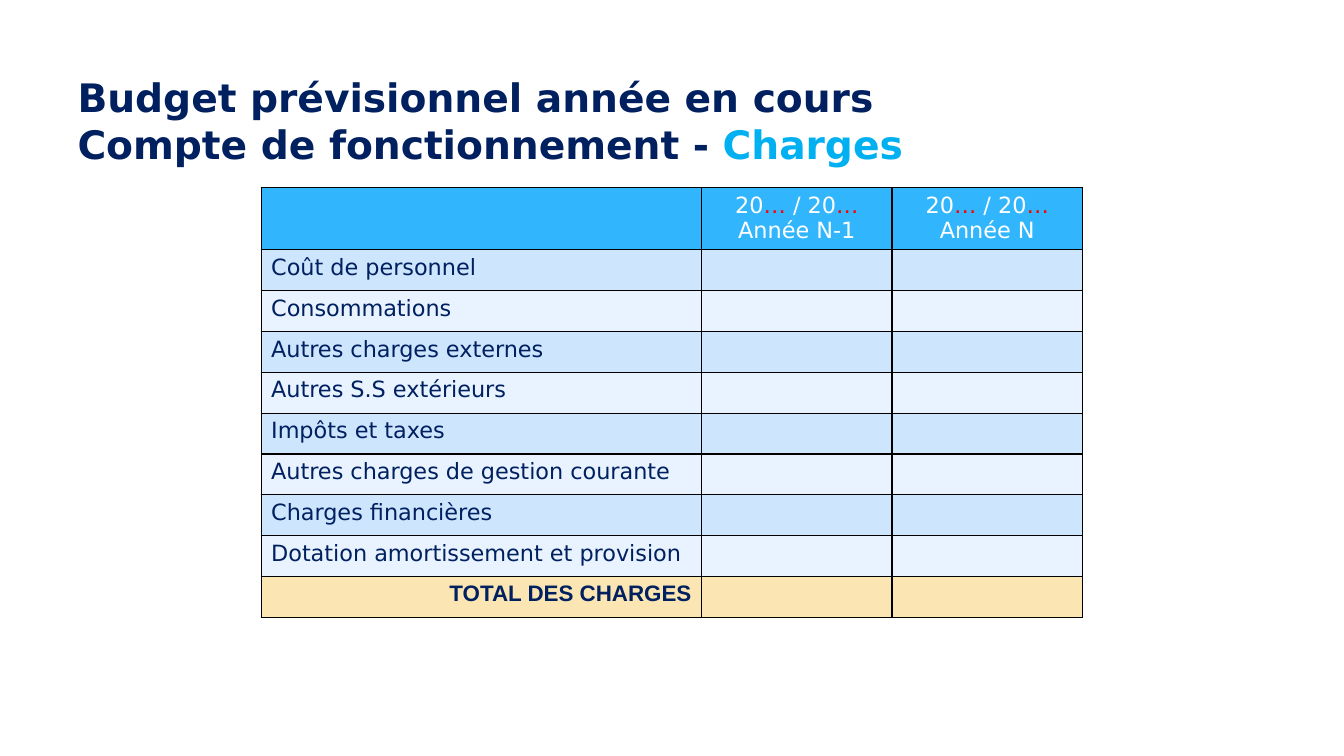
from dataclasses import dataclass

from lxml.etree import SubElement
from pptx import Presentation
from pptx.dml.color import RGBColor
from pptx.enum.text import MSO_ANCHOR, MSO_AUTO_SIZE, PP_ALIGN
from pptx.oxml.ns import qn
from pptx.util import Cm, Pt


@dataclass(frozen=True)
class Theme:
    navy: str = "002060"
    cyan: str = "00B0F0"
    red: str = "FF0000"
    white: str = "FFFFFF"
    border: str = "000000"
    header: str = "31B6FD"
    bands: tuple = ("CEE5FE", "E8F3FF")
    total: str = "FBE6B3"
    font: str = "DejaVu Sans"
    total_font: str = "Arial"
    title_size: int = 28
    table_size: int = 16


T = Theme()
CHARGES = [
    "Coût de personnel",
    "Consommations",
    "Autres charges externes",
    "Autres S.S extérieurs",
    "Impôts et taxes",
    "Autres charges de gestion courante",
    "Charges financières",
    "Dotation amortissement et provision",
]
YEARS = ["Année N-1", "Année N"]
COL_WIDTHS = (11.1, 4.8, 4.8)
HEADER_HEIGHT, ROW_HEIGHT = 1.57, 1.03


def add_run(p, text, color=T.navy, size=T.table_size, font=T.font, bold=False):
    r = p.add_run()
    r.text = text
    r.font.name = font
    r.font.size = Pt(size)
    r.font.bold = bold
    r.font.color.rgb = RGBColor.from_string(color)


def style_cell(cell, fill):
    """Give the cell a thin border on each side and a solid fill."""
    tc_pr = cell._tc.get_or_add_tcPr()
    for side in ("lnL", "lnR", "lnT", "lnB"):
        ln = SubElement(tc_pr, qn(f"a:{side}"), w=str(Pt(1)))
        solid = SubElement(ln, qn("a:solidFill"))
        SubElement(solid, qn("a:srgbClr"), val=T.border)
    cell.fill.solid()
    cell.fill.fore_color.rgb = RGBColor.from_string(fill)
    if not cell.text_frame.text:
        cell.margin_top = cell.margin_bottom = 0


def add_title(s, x, y, w, h):
    sp = s.shapes.title
    sp.left, sp.top, sp.width, sp.height = Cm(x), Cm(y), Cm(w), Cm(h)
    tf = sp.text_frame
    tf.word_wrap = True
    tf.auto_size = MSO_AUTO_SIZE.NONE
    tf.vertical_anchor = MSO_ANCHOR.TOP
    p = tf.paragraphs[0]
    p.alignment = PP_ALIGN.LEFT
    look = dict(size=T.title_size, bold=True)
    add_run(p, "Budget prévisionnel année en cours", **look)
    p.add_line_break()
    add_run(p, "Compte de fonctionnement - ", **look)
    add_run(p, "Charges", color=T.cyan, **look)


def fill_year_heading(cell, year):
    tf = cell.text_frame
    p = tf.paragraphs[0]
    for text, color in (("20", T.white), ("… ", T.red),
                        ("/ 20", T.white), ("…", T.red)):
        add_run(p, text, color=color)
    add_run(tf.add_paragraph(), year, color=T.white)
    for p in tf.paragraphs:
        p.alignment = PP_ALIGN.CENTER


def add_charges_table(s, x, y):
    n_rows = len(CHARGES) + 2
    height = HEADER_HEIGHT + (n_rows - 1) * ROW_HEIGHT
    table = s.shapes.add_table(n_rows, len(COL_WIDTHS), Cm(x), Cm(y),
                               Cm(sum(COL_WIDTHS)), Cm(height)).table
    table.first_row = table.horz_banding = False
    for col, width in zip(table.columns, COL_WIDTHS):
        col.width = Cm(width)
    for i, row in enumerate(table.rows):
        row.height = Cm(ROW_HEIGHT if i else HEADER_HEIGHT)

    for col, year in enumerate(YEARS, 1):
        fill_year_heading(table.cell(0, col), year)
    for row, charge in enumerate(CHARGES, 1):
        add_run(table.cell(row, 0).text_frame.paragraphs[0], charge)
    p = table.cell(n_rows - 1, 0).text_frame.paragraphs[0]
    p.alignment = PP_ALIGN.RIGHT
    add_run(p, "TOTAL DES CHARGES", font=T.total_font, bold=True)

    bands = [T.bands[i % 2] for i in range(len(CHARGES))]
    for row, fill in zip(table.rows, [T.header, *bands, T.total]):
        for cell in row.cells:
            style_cell(cell, fill)


def main():
    prs = Presentation()
    prs.slide_width, prs.slide_height = Cm(33.87), Cm(19.05)
    s = prs.slides.add_slide(prs.slide_layouts[5])
    add_title(s, 1.7, 1.73, 26.85, 2.2)
    add_charges_table(s, 6.58, 4.72)
    prs.save("out.pptx")


if __name__ == "__main__":
    main()
